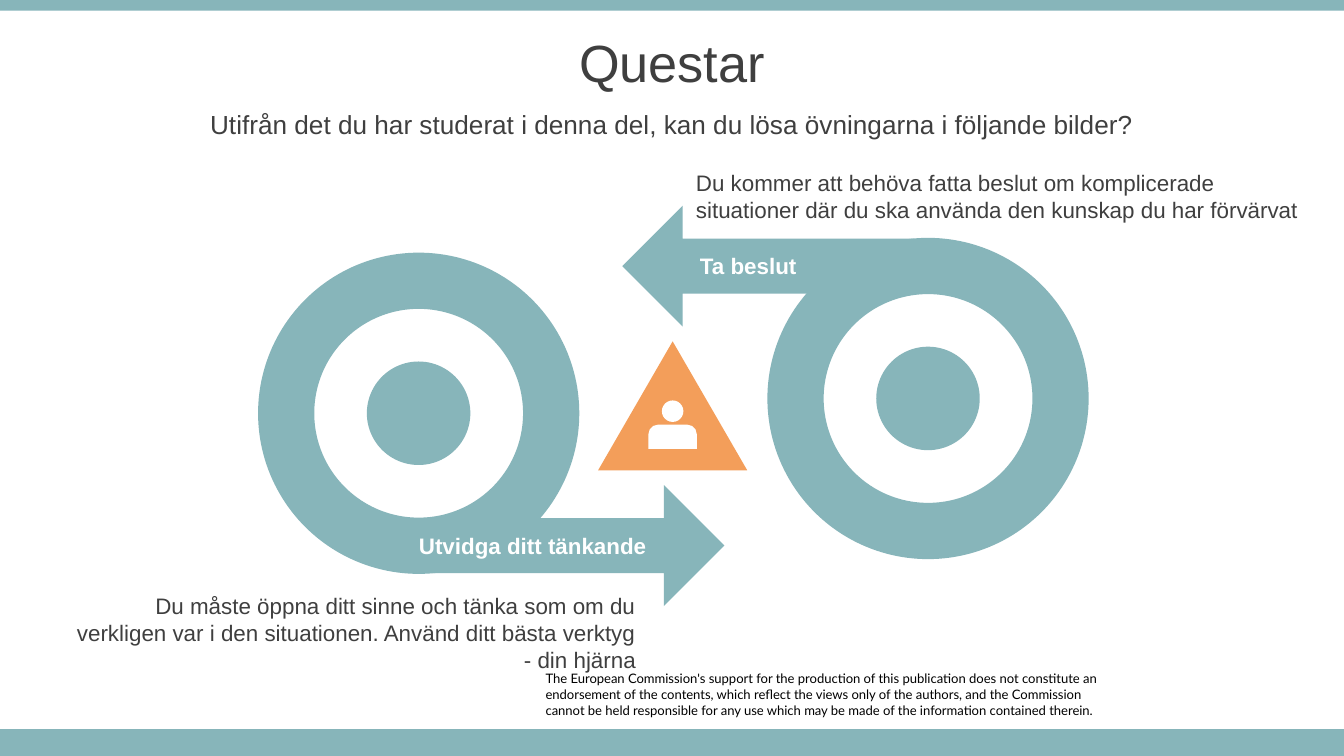
import pptx
import pptx.dml.color
import pptx.enum.shapes
import pptx.enum.text
import pptx.util
from dataclasses import dataclass

Inches = pptx.util.Inches
Shape = pptx.enum.shapes.MSO_SHAPE
Align = pptx.enum.text.PP_ALIGN
Anchor = pptx.enum.text.MSO_ANCHOR

SLIDE_WIDTH = 10
SLIDE_HEIGHT = SLIDE_WIDTH * 9 / 16


@dataclass(frozen=True)
class Theme:
    teal: str = "87B5BA"
    orange: str = "F39E5A"
    white: str = "FFFFFF"
    ink: str = "3F3F3F"
    black: str = "000000"
    font: str = "Arial"
    notice_font: str = "Lato"
    title: int = 28
    subtitle: int = 14
    body: int = 12
    notice: int = 7


THEME = Theme()


def rgb(color):
    return pptx.dml.color.RGBColor.from_string(color)


def add_solid(slide, preset, box, color, adjustments=(), rotation=0):
    solid = slide.shapes.add_shape(preset, *map(Inches, box))
    solid.shadow.inherit = False
    solid.fill.solid()
    solid.fill.fore_color.rgb = rgb(color)
    solid.line.fill.background()
    solid.rotation = rotation
    for index, value in enumerate(adjustments):
        solid.adjustments[index] = value


def add_text(slide, box, paragraphs, size, color=THEME.ink, font=THEME.font,
             align=Align.LEFT, anchor=Anchor.TOP, bold=False, inset=(0.1, 0.05)):
    frame = slide.shapes.add_textbox(*map(Inches, box)).text_frame
    frame.word_wrap = True
    frame.vertical_anchor = anchor
    frame.margin_left = frame.margin_right = Inches(inset[0])
    frame.margin_top = frame.margin_bottom = Inches(inset[1])
    for index, text in enumerate(paragraphs):
        paragraph = frame.add_paragraph() if index else frame.paragraphs[0]
        paragraph.alignment = align
        run = paragraph.add_run()
        run.text = text
        run.font.name = font
        run.font.size = pptx.util.Pt(size)
        run.font.bold = bold
        run.font.color.rgb = rgb(color)


def add_frame(slide, box):
    left, top, width, height = box
    header, footer = 0.08, 0.2
    add_text(slide, (left + 4.06, top + 4.99, 4.17, 0.35), [
        "The European Commission's support for the production of this publication "
        "does not constitute an endorsement of the contents, which reflect the views "
        "only of the authors, and the Commission",
        "cannot be held responsible for any use which may be made of the information "
        "contained therein.",
    ], THEME.notice, THEME.black, THEME.notice_font, inset=(0, 0))
    add_solid(slide, Shape.RECTANGLE, (left, top + height - footer, width, footer), THEME.teal)
    add_solid(slide, Shape.RECTANGLE, (left, top, width, header), THEME.teal)


def add_heading(slide, box):
    left, top, width, height = box
    title_height = 0.63
    add_text(slide, (left, top, width, title_height), ["Questar"], THEME.title,
             align=Align.CENTER, anchor=Anchor.MIDDLE)
    add_text(slide, (left, top + title_height, width, height - title_height),
             ["Utifrån det du har studerat i denna del, kan du lösa övningarna i följande bilder?"],
             THEME.subtitle, align=Align.CENTER, anchor=Anchor.MIDDLE)


def add_target(slide, box, label, turned=False):
    left, top, width, height = box
    rotation = 180 if turned else 0

    def place(x, y, w, h):
        if turned:
            x, y = width - x - w, height - y - h
        return left + x, top + y, w, h

    add_solid(slide, Shape.DONUT, place(0, 0, 2.39, 2.39), THEME.teal, [0.175], rotation)
    add_solid(slide, Shape.RIGHT_ARROW, place(1.3, 1.73, 2.17, 0.9), THEME.teal,
              [0.455, 0.5], rotation)
    add_solid(slide, Shape.OVAL, place(0.81, 0.81, 0.77, 0.77), THEME.teal)
    add_text(slide, place(0.43, 2.03, 2.56, 0.3), [label], THEME.body, THEME.white,
             align=Align.LEFT if turned else Align.RIGHT, bold=True)


def add_person_sign(slide, box):
    left, top, width, height = box
    center = left + width / 2
    head, shoulders = 0.16, 0.36
    add_solid(slide, Shape.ISOSCELES_TRIANGLE, box, THEME.orange)
    add_solid(slide, Shape.OVAL, (center - head / 2, top + 0.44, head, head), THEME.white)
    add_solid(slide, Shape.ROUND_2_SAME_RECTANGLE,
              (center - shoulders / 2, top + 0.62, shoulders, 0.18), THEME.white, [0.39, 0])


def main():
    deck = pptx.Presentation()
    deck.slide_width, deck.slide_height = Inches(SLIDE_WIDTH), Inches(SLIDE_HEIGHT)
    slide = deck.slides.add_slide(deck.slide_layouts[6])
    add_frame(slide, (0, 0, SLIDE_WIDTH, SLIDE_HEIGHT))
    add_heading(slide, (0, 0.14, SLIDE_WIDTH, 0.94))
    add_target(slide, (1.92, 1.88, 3.47, 2.63), "Utvidga ditt tänkande")
    add_target(slide, (4.63, 1.53, 3.47, 2.63), "Ta beslut", turned=True)
    add_person_sign(slide, (4.45, 2.54, 1.11, 0.96))
    add_text(slide, (5.08, 1.21, 4.72, 0.5),
             ["Du kommer att behöva fatta beslut om komplicerade situationer där du ska "
              "använda den kunskap du har förvärvat"], THEME.body)
    add_text(slide, (0.42, 4.36, 4.41, 0.71),
             ["Du måste öppna ditt sinne och tänka som om du verkligen var i den situationen. "
              "Använd ditt bästa verktyg - din hjärna"], THEME.body, align=Align.RIGHT)
    deck.save("out.pptx")


if __name__ == "__main__":
    main()
